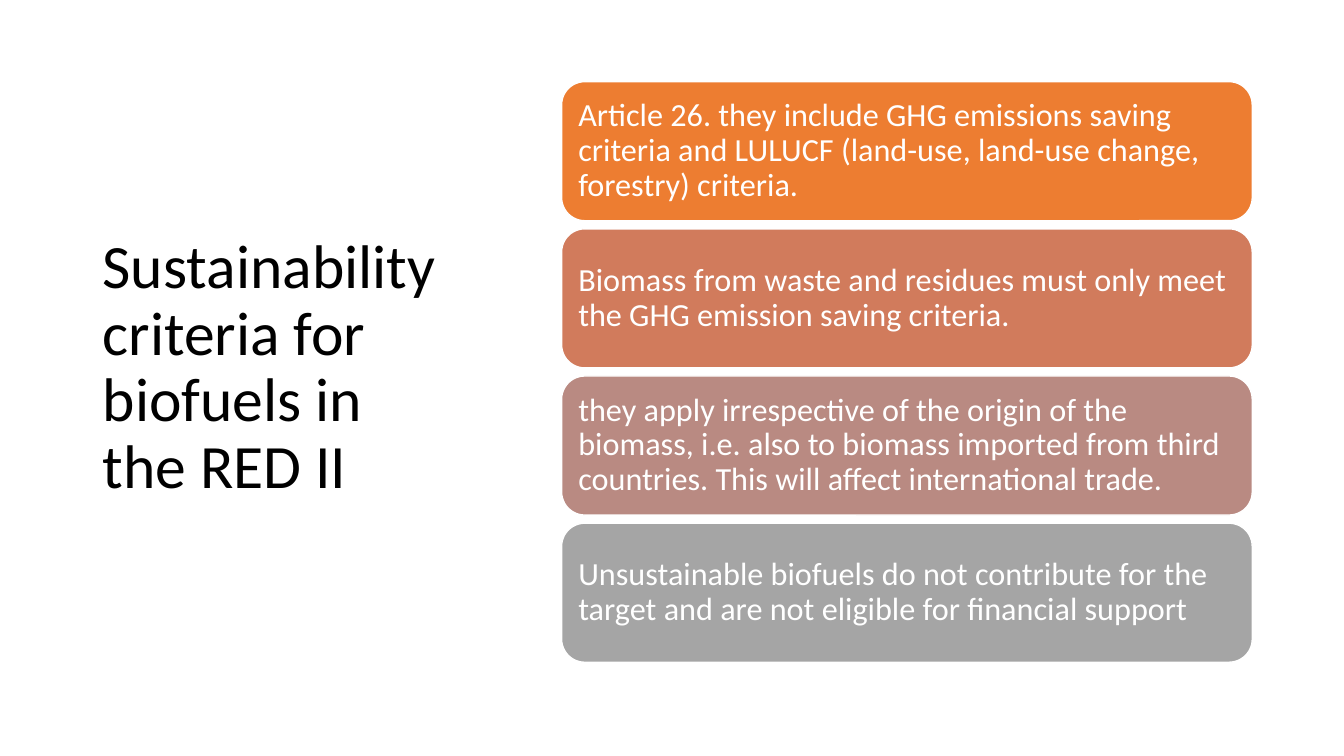
from pptx import Presentation
from pptx.dml.color import RGBColor
from pptx.enum.shapes import MSO_SHAPE
from pptx.enum.text import MSO_ANCHOR, PP_ALIGN
from pptx.util import Pt

TITLE = "Sustainability criteria for biofuels in the RED II"
CRITERIA = [
    ("Article 26. they include GHG emissions saving criteria and LULUCF "
     "(land-use, land-use change, forestry) criteria.", "orange"),
    ("Biomass from waste and residues must only meet the GHG emission "
     "saving criteria.", "terracotta"),
    ("they apply irrespective of the origin of the biomass, i.e. also to biomass "
     "imported from third countries. This will affect international trade.", "rose"),
    ("Unsustainable biofuels do not contribute for the target and are not "
     "eligible for financial support", "grey"),
]
COLORS = {
    "orange": "ED7D31",
    "terracotta": "D17B5C",
    "rose": "B98A82",
    "grey": "A5A5A5",
    "white": "FFFFFF",
    "black": "000000",
}
FONT = "Calibri"
EMU_PER_PX = 9144  # 100 px to the inch

SLIDE_SIZE = (1333, 750)
TITLE_BOX = (92, 61, 369, 609)
CARD_LEFT, CARD_TOP, CARD_WIDTH, CARD_HEIGHT = 557, 81, 685, 138
CARD_GAP = 8
CARD_INSET = 10


def px(length):
    return length * EMU_PER_PX


def color(name):
    return RGBColor.from_string(COLORS[name])


def write(frame, text, size, color_name):
    """Fill a text frame with one left-aligned, vertically centred paragraph."""
    frame.word_wrap = True
    frame.vertical_anchor = MSO_ANCHOR.MIDDLE
    paragraph = frame.paragraphs[0]
    paragraph.alignment = PP_ALIGN.LEFT
    paragraph.line_spacing = 0.9
    run = paragraph.add_run()
    run.text = text
    run.font.name = FONT
    run.font.size = Pt(size)
    run.font.color.rgb = color(color_name)


def add_card(slide, top, text, fill):
    card = slide.shapes.add_shape(
        MSO_SHAPE.ROUNDED_RECTANGLE,
        px(CARD_LEFT), px(top), px(CARD_WIDTH), px(CARD_HEIGHT))
    card.shadow.inherit = False
    card.fill.solid()
    card.fill.fore_color.rgb = color(fill)
    card.line.color.rgb = color("white")
    card.line.width = Pt(1)
    frame = card.text_frame
    frame.margin_left = frame.margin_right = px(CARD_INSET)
    frame.margin_top = frame.margin_bottom = px(CARD_INSET)
    write(frame, text, 23, "white")


def main():
    presentation = Presentation()
    presentation.slide_width, presentation.slide_height = map(px, SLIDE_SIZE)
    slide = presentation.slides.add_slide(presentation.slide_layouts[6])

    title = slide.shapes.add_textbox(*map(px, TITLE_BOX))
    write(title.text_frame, TITLE, 44, "black")

    for row, (text, fill) in enumerate(CRITERIA):
        add_card(slide, CARD_TOP + row * (CARD_HEIGHT + CARD_GAP), text, fill)

    presentation.save("out.pptx")


if __name__ == "__main__":
    main()
